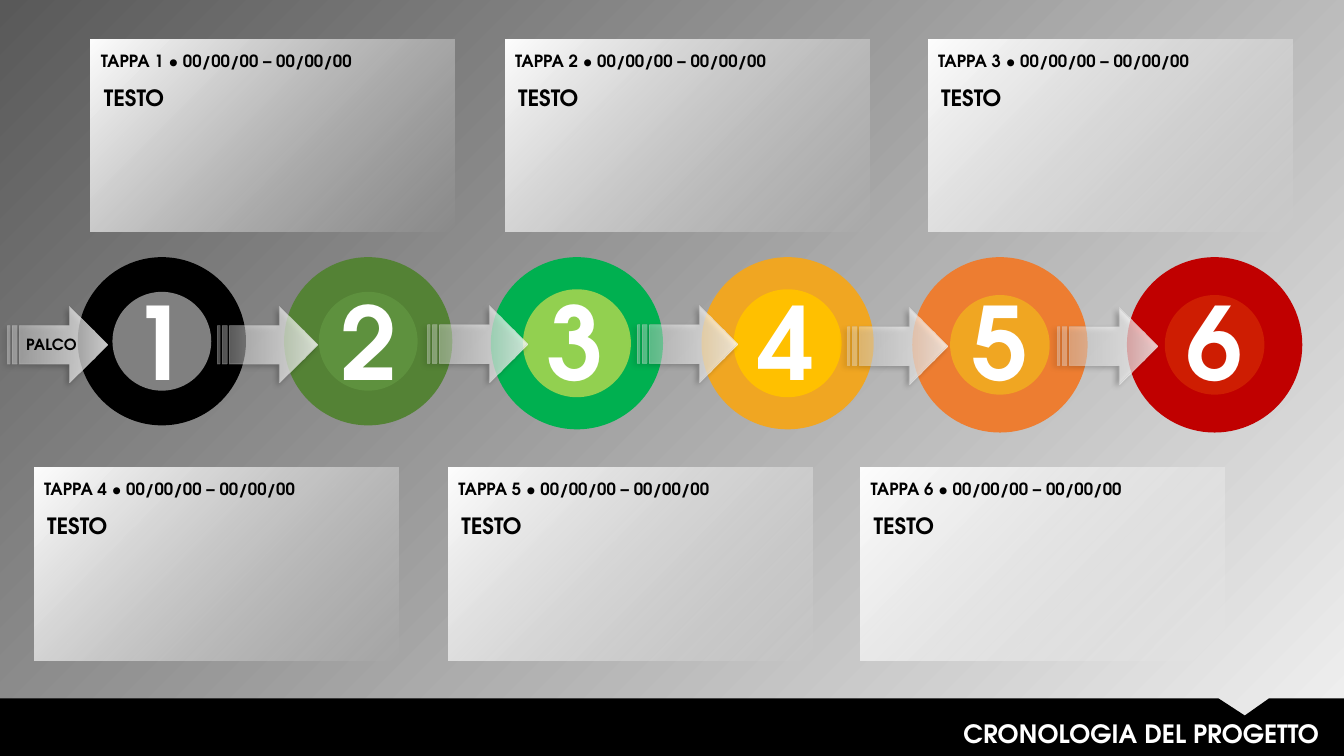
from dataclasses import dataclass

from lxml import etree
from pptx import Presentation
from pptx.dml.color import RGBColor
from pptx.dml.fill import FillFormat
from pptx.enum import shapes, text
from pptx.oxml import ns
from pptx.util import Cm, Pt


@dataclass(frozen=True)
class Theme:
    font: str = "TeX Gyre Adventor"
    black: str = "000000"
    white: str = "FFFFFF"
    pale: str = "F2F2F2"
    dark: str = "595959"
    edge: str = "BFBFBF"
    digit: int = 72
    title: int = 18
    body: int = 16
    head: int = 12
    label: int = 11


@dataclass(frozen=True)
class Stage:
    left: float
    size: float
    core: float
    ring: str
    disc: str
    digit: float
    arrow: float


@dataclass(frozen=True)
class Card:
    left: float
    top: float


THEME = Theme()
STAGES = [
    Stage(1.96, 4.24, 2.49, "000000", "808080", 3.07, 7.72),
    Stage(7.16, 4.24, 2.49, "548235", "5E913E", 8.33, 7.72),
    Stage(12.37, 4.34, 2.72, "00B050", "92D050", 13.54, 7.7),
    Stage(17.68, 4.34, 2.72, "F0A622", "FFC000", 18.87, 7.7),
    Stage(22.99, 4.42, 2.51, "ED7D31", "F0A622", 24.26, 7.75),
    Stage(28.4, 4.42, 2.51, "C00000", "CE1D02", 29.64, 7.75),
]
CARDS = [
    Card(2.29, 0.99), Card(12.73, 0.99), Card(23.39, 0.99),
    Card(0.86, 11.79), Card(11.3, 11.79), Card(21.69, 11.79),
]
WIDE, HIGH = 33.87, 19.05
RING_TOP = 6.48
ARROW_LEFT, ARROW_STEP = 0.2, 5.29


def fade(color, percent: int) -> None:
    """Set the opacity of a colour element."""
    etree.SubElement(color, ns.qn("a:alpha"), val=str(percent * 1000))


def cast(holder, blur: float, far: float, angle: int, percent: int) -> None:
    """Add an outer shadow to an effect list."""
    drop = etree.SubElement(
        holder, ns.qn("a:outerShdw"), blurRad=str(Pt(blur)), dist=str(Pt(far)),
        dir=str(angle * 60000), algn="tl", rotWithShape="0")
    fade(etree.SubElement(drop, ns.qn("a:srgbClr"), val=THEME.black), percent)


def blend(fill: FillFormat, first: str, last: str, angle: int) -> None:
    """Fill with a two-colour gradient; the angle runs counter-clockwise."""
    fill.gradient()
    fill.gradient_angle = angle
    for stop, tone in zip(fill.gradient_stops, (first, last)):
        stop.color.rgb = RGBColor.from_string(tone)


def dim(shape, *levels: int) -> None:
    """Set the opacity of each gradient stop in turn."""
    for stop, level in zip(shape.element.iter(ns.qn("a:gs")), levels):
        fade(stop[0], level)


def plain(shape, tone: str) -> None:
    shape.fill.solid()
    shape.fill.fore_color.rgb = RGBColor.from_string(tone)
    shape.line.fill.background()
    shape.shadow.inherit = False


def write(box, words: str, size: int, tone: str, glow: bool = False) -> None:
    """Put one bold run in the box, with a soft shadow if glow is set."""
    frame = box.text_frame
    frame.word_wrap = True
    frame.auto_size = text.MSO_AUTO_SIZE.SHAPE_TO_FIT_TEXT
    frame.vertical_anchor = text.MSO_ANCHOR.TOP
    run = frame.paragraphs[0].add_run()
    run.text = words
    run.font.name = THEME.font
    run.font.size = Pt(size)
    run.font.bold = True
    run.font.color.rgb = RGBColor.from_string(tone)
    if glow:
        mark = etree.Element(ns.qn("a:effectLst"))
        cast(mark, 3, 3, 45, 40)
        run.font.fill  # the fill element stands before the effects
        run.font.color.rgb = RGBColor.from_string(tone)
        run._r.rPr.find(ns.qn("a:solidFill")).addnext(mark)


def label(slide, left: float, top: float, wide: float, high: float,
          words: str, size: int, tone: str, glow: bool = False) -> None:
    box = slide.shapes.add_textbox(Cm(left), Cm(top), Cm(wide), Cm(high))
    write(box, words, size, tone, glow)


def draw_ring(slide, stage: Stage) -> None:
    group = slide.shapes.add_group_shape()
    for size, tone in ((stage.size, stage.ring), (stage.core, stage.disc)):
        gap = (stage.size - size) / 2
        disc = group.shapes.add_shape(
            shapes.MSO_SHAPE.OVAL, Cm(stage.left + gap), Cm(RING_TOP + gap),
            Cm(size), Cm(size))
        plain(disc, tone)


def draw_arrow(slide, left: float, top: float) -> None:
    arrow = slide.shapes.add_shape(
        shapes.MSO_SHAPE.STRIPED_RIGHT_ARROW, Cm(left), Cm(top), Cm(2.51), Cm(1.93))
    blend(arrow.fill, THEME.white, THEME.white, 0)
    dim(arrow, 30, 80)
    arrow.line.width = Pt(0.25)
    arrow.line.color.rgb = RGBColor.from_string(THEME.edge)
    props = arrow.element.spPr
    fade(props.find(ns.qn("a:ln")).find(".//" + ns.qn("a:srgbClr")), 50)
    arrow.shadow.inherit = False
    cast(props.find(ns.qn("a:effectLst")), 4, 3, 135, 40)


def draw_card(slide, card: Card, number: int) -> None:
    panel = slide.shapes.add_shape(
        shapes.MSO_SHAPE.ROUNDED_RECTANGLE, Cm(card.left), Cm(card.top),
        Cm(9.17), Cm(4.85))
    panel.adjustments[0] = 0
    plain(panel, THEME.white)
    blend(panel.fill, THEME.pale, THEME.white, 135)
    dim(panel, 0, 100)
    label(slide, card.left + 0.08, card.top + 1, 9.04, 0.94,
          "TESTO", THEME.body, THEME.black, True)
    label(slide, card.left, card.top + 0.16, 9.22, 0.76,
          f"TAPPA {number} • 00/00/00 – 00/00/00", THEME.head, THEME.black, True)


def draw_foot(slide) -> None:
    """Draw the notched bar and bring the title in front of it."""
    top = 17.6
    pen = slide.shapes.build_freeform(Cm(0), Cm(top))
    spots = [(30.71, top), (31.37, 18.03), (31.98, top), (WIDE, top),
             (WIDE, HIGH), (0, HIGH)]
    pen.add_line_segments([(Cm(x), Cm(y)) for x, y in spots], close=True)
    plain(pen.convert_to_shape(), THEME.black)

    title = slide.shapes.title
    title.left, title.top, title.width, title.height = (
        Cm(16.28), Cm(17.98), Cm(17.22), Cm(1.02))
    write(title, "CRONOLOGIA DEL PROGETTO", THEME.title, THEME.white)
    title.text_frame.paragraphs[0].alignment = text.PP_ALIGN.RIGHT
    title.element.getparent().append(title.element)


def main() -> None:
    deck = Presentation()
    deck.slide_width, deck.slide_height = Cm(WIDE), Cm(HIGH)
    slide = deck.slides.add_slide(deck.slide_layouts[5])
    blend(slide.background.fill, THEME.pale, THEME.dark, 135)
    draw_foot(slide)
    for stage in STAGES:
        draw_ring(slide, stage)
    for index, stage in enumerate(STAGES):
        draw_arrow(slide, ARROW_LEFT + index * ARROW_STEP, stage.arrow)
        label(slide, stage.digit, 6.93, 2.34, 3.33,
              str(index + 1), THEME.digit, THEME.white)
    label(slide, 0.41, 8.33, 2.01, 0.74, "PALCO", THEME.label, THEME.black, True)
    for number, card in enumerate(CARDS, 1):
        draw_card(slide, card, number)
    deck.save("out.pptx")


if __name__ == "__main__":
    main()
